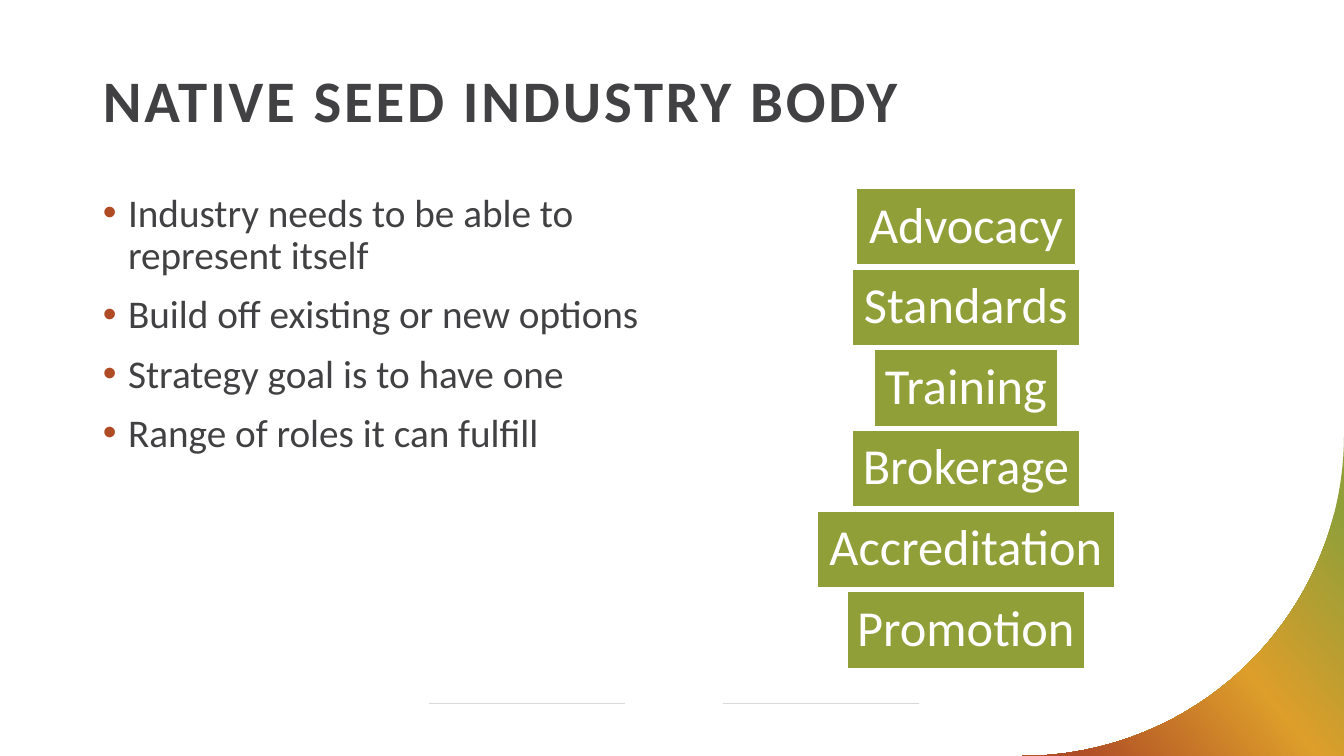
"""Build the slide on the roles of a native seed industry body."""
import copy
import math

import lxml.etree
import pptx
import pptx.dml.color
import pptx.enum.dml
import pptx.enum.shapes
import pptx.enum.text
import pptx.oxml.ns
import pptx.util

Inches, Pt = pptx.util.Inches, pptx.util.Pt
RGB = pptx.dml.color.RGBColor.from_string
qn = pptx.oxml.ns.qn
Align, Anchor = pptx.enum.text.PP_ALIGN, pptx.enum.text.MSO_ANCHOR

THEME = {
    "font": "Calibri",
    "text": "414042",
    "green": "919F39",
    "amber": "DD9E2A",
    "rust": "AF4C26",
    "rule": "D9D8DA",
    "white": "FFFFFF",
    "title": 42,
    "body": 28,
    "role": 36,
}


def apply_format(target, values):
    for name, value in values.items():
        setattr(target, name, value)


def write_text(paragraph, text, size, color, bold=False):
    run = paragraph.add_run()
    run.text = text
    apply_format(run.font, {"name": THEME["font"], "size": Pt(THEME[size]), "bold": bold})
    run.font.color.rgb = RGB(THEME[color])
    return run


deck = pptx.Presentation()
apply_format(deck, {"slide_width": Inches(13.33), "slide_height": Inches(7.5)})
slide = deck.slides.add_slide(deck.slide_layouts[1])
title, points = slide.placeholders

for holder, top, width, height in ((title, 0.66, 11.5, 1.02), (points, 1.87, 5.67, 4.76)):
    apply_format(holder, {"left": Inches(0.92), "top": Inches(top),
                          "width": Inches(width), "height": Inches(height)})
    apply_format(holder.text_frame, {"vertical_anchor": Anchor.TOP, "word_wrap": True,
                                     "auto_size": pptx.enum.text.MSO_AUTO_SIZE.NONE})

heading = title.text_frame.paragraphs[0]
apply_format(heading, {"alignment": Align.LEFT, "line_spacing": 0.9})
heading_run = write_text(heading, "NATIVE SEED INDUSTRY BODY", "title", "text", bold=True)
heading_run.font._element.set("spc", "200")

POINTS = (
    "Industry needs to be able to represent itself",
    "Build off existing or new options",
    "Strategy goal is to have one",
    "Range of roles it can fulfill",
)
for index, wording in enumerate(POINTS):
    frame = points.text_frame
    point = frame.add_paragraph() if index else frame.paragraphs[0]
    apply_format(point, {"line_spacing": 0.9, "space_before": Pt(0), "space_after": Pt(12)})
    properties = point._p.get_or_add_pPr()
    properties.set("marL", str(Inches(0.25)))
    properties.set("indent", str(-Inches(0.25)))
    bullet_color = lxml.etree.SubElement(properties, qn("a:buClr"))
    lxml.etree.SubElement(bullet_color, qn("a:srgbClr"), val=THEME["rust"])
    lxml.etree.SubElement(properties, qn("a:buFont"), typeface="Arial")
    lxml.etree.SubElement(properties, qn("a:buChar"), char="•")
    write_text(point, wording, "body", "text")

ROLES = {
    "Advocacy": 2.17,
    "Standards": 2.26,
    "Training": 1.82,
    "Brokerage": 2.26,
    "Accreditation": 2.95,
    "Promotion": 2.36,
}
ROLE_CENTER, ROLE_TOP, ROLE_PITCH, ROLE_HEIGHT = 9.58, 1.87, 0.8, 0.76
roles = slide.shapes.add_group_shape()
for index, (role, width) in enumerate(ROLES.items()):
    block = roles.shapes.add_shape(
        pptx.enum.shapes.MSO_SHAPE.RECTANGLE,
        Inches(ROLE_CENTER - width / 2), Inches(ROLE_TOP + index * ROLE_PITCH),
        Inches(width), Inches(ROLE_HEIGHT))
    block.shadow.inherit = False
    block.fill.solid()
    block.fill.fore_color.rgb = RGB(THEME["green"])
    block.line.color.rgb = RGB(THEME["white"])
    block.line.width = Pt(1)
    apply_format(block.text_frame, {"word_wrap": False, "vertical_anchor": Anchor.MIDDLE})
    for side in ("left", "top", "right", "bottom"):
        setattr(block.text_frame, f"margin_{side}", Inches(0.1))
    label = block.text_frame.paragraphs[0]
    apply_format(label, {"alignment": Align.CENTER, "line_spacing": 0.9})
    write_text(label, role, "role", "white")

for left in (4.25, 7.17):
    rule = slide.shapes.add_connector(
        pptx.enum.shapes.MSO_CONNECTOR.STRAIGHT,
        Inches(left), Inches(6.98), Inches(left + 1.95), Inches(6.98))
    rule.line.color.rgb = RGB(THEME["rule"])
    rule.line.width = Pt(0.5)
    lxml.etree.SubElement(rule._element.spPr, qn("a:effectLst"))

ARC_X, ARC_Y, RADIUS, ARC_STEPS = 10.14, 4.31, 3.19, 90
arc = []
for step in range(ARC_STEPS + 1):
    angle = math.pi / 2 * step / ARC_STEPS
    arc.append((Inches(ARC_X + RADIUS * math.cos(angle)),
                Inches(ARC_Y + RADIUS * math.sin(angle))))
outline = slide.shapes.build_freeform(Inches(ARC_X + RADIUS), Inches(ARC_Y + RADIUS))
outline.add_line_segments(arc, close=True)
corner = outline.convert_to_shape()
corner.shadow.inherit = False
corner.line.fill.background()
corner.fill.gradient()
corner.fill.gradient_angle = 220
stop_list = corner._element.spPr.find(qn("a:gradFill")).find(qn("a:gsLst"))
stop_list.append(copy.deepcopy(stop_list[0]))
CORNER_STOPS = ((0.12, "green"), (0.5, "amber"), (0.91, "rust"))
for stop, (position, color) in zip(corner.fill.gradient_stops, CORNER_STOPS):
    stop.position = position
    stop.color.rgb = RGB(THEME[color])

deck.save("out.pptx")
